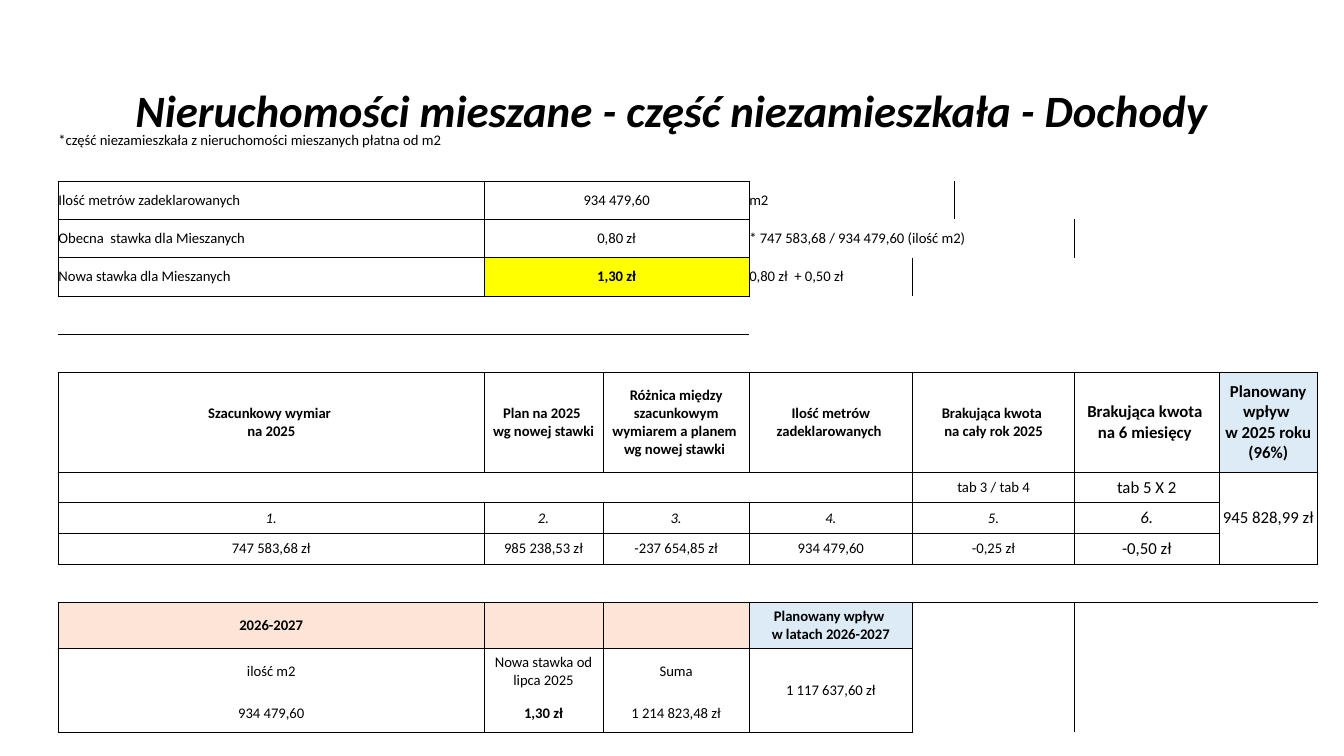
import pptx
import pptx.util
import pptx.dml.color
import pptx.enum.text
import pptx.oxml
import pptx.oxml.ns
import lxml.etree

Pt = pptx.util.Pt
qn = pptx.oxml.ns.qn
ALIGN = pptx.enum.text.PP_ALIGN
MIDDLE = pptx.enum.text.MSO_ANCHOR.MIDDLE

FONT = "Calibri"
NO_STYLE = "{2D5ABB26-0587-4C30-8999-92F81FD0307C}"
BLACK, YELLOW, BLUE, PEACH = "000000", "FFFF00", "DDEBF7", "FCE4D6"
SMALL, LARGE = 10.5, 12

COLUMNS = [304, 85, 104.5, 116.5, 30, 86, 103, 70.5]
ROWS = [45] + [27.3] * 5 + [71.3] + [21] * 3 + [27.3, 32.9, 32.6, 0, 27.3, 27.3]

TEXTS = {
    0: {0: "*część niezamieszkała z nieruchomości mieszanych płatna od m2 \n"},
    1: {0: "Ilość metrów zadeklarowanych", 1: "934 479,60", 3: "m2"},
    2: {0: "Obecna  stawka dla Mieszanych", 1: "0,80 zł",
        3: "* 747 583,68 / 934 479,60 (ilość m2)"},
    3: {0: "Nowa stawka dla Mieszanych", 1: "1,30 zł", 3: "0,80 zł  + 0,50 zł"},
    6: {0: "Szacunkowy wymiar \nna 2025", 1: "Plan na 2025 \nwg nowej stawki",
        2: "Różnica między szacunkowym wymiarem a planem \nwg nowej stawki ",
        3: "Ilość metrów zadeklarowanych ", 4: "Brakująca kwota \nna cały rok 2025",
        6: "Brakująca kwota \nna 6 miesięcy ", 7: "Planowany wpływ \nw 2025 roku (96%)"},
    7: {4: "tab 3 / tab 4", 6: "tab 5 X 2", 7: "945 828,99 zł"},
    8: {0: "1.", 1: "2.", 2: "3.", 3: "4.", 4: "5.", 6: "6."},
    9: {0: "747 583,68 zł", 1: "985 238,53 zł", 2: "-237 654,85 zł",
        3: "934 479,60", 4: "-0,25 zł", 6: "-0,50 zł"},
    11: {0: "2026-2027", 3: "Planowany wpływ \nw latach 2026-2027"},
    12: {0: "ilość m2", 1: "Nowa stawka od lipca 2025", 2: "Suma", 3: "1 117 637,60 zł"},
    13: {0: "934 479,60", 1: "1,30 zł", 2: "1 214 823,48 zł"},
}
FILLS = {(3, 1): YELLOW, (6, 7): BLUE, (11, 3): BLUE,
         (11, 0): PEACH, (11, 1): PEACH, (11, 2): PEACH}
BOLD_ROWS, BOLD_CELLS = (6, 11), ((3, 1), (13, 1))
ITALIC_ROW = 8

SPANS = [(0, 3, 1, 2), (1, 3, 1, 2), (2, 3, 1, 3), (7, 0, 1, 4), (7, 7, 3, 1),
         (12, 3, 3, 1), (12, 4, 2, 2), (12, 6, 2, 1), (12, 7, 2, 1)]
SPANS += [(row, 1, 1, 2) for row in (1, 2, 3)]
SPANS += [(row, 4, 1, 2) for row in (3, 4, 5, 6, 7, 8, 9, 10, 11, 14, 15)]
SPANS += [(13, col, 2, 1) for col in range(3)]

GRIDS = [(1, 3, 2), (6, 9, 7), (11, 14, 3)]
SIDES = {"lnL": (0, -1), "lnR": (0, 1), "lnT": (-1, 0), "lnB": (1, 0)}


def rgb(value):
    return pptx.dml.color.RGBColor.from_string(value)


def set_attrs(obj, values):
    for name, value in values.items():
        setattr(obj, name, value)


def format_run(r, size, bold=False, italic=False):
    set_attrs(r.font, {"name": FONT, "size": Pt(size), "bold": bold, "italic": italic})
    r.font.color.rgb = rgb(BLACK)


def size_breaks(p, size):
    points = str(int(size * 100))
    for br in p._p.findall(qn("a:br")):
        lxml.etree.SubElement(br, qn("a:rPr")).set("sz", points)
    lxml.etree.SubElement(p._p, qn("a:endParaRPr")).set("sz", points)


def in_grid(row, col):
    return any(top <= row <= bottom and col <= right for top, bottom, right in GRIDS)


def add_borders(cell, row, col):
    tcPr = cell._tc.get_or_add_tcPr()
    sides = [side for side, (down, across) in SIDES.items()
             if in_grid(row, col) or (col + across >= 0 and in_grid(row + down, col + across))]
    for place, side in enumerate(sides):
        ln = pptx.oxml.parse_xml(
            f'<a:{side} xmlns:a="http://schemas.openxmlformats.org/drawingml/2006/main" w="6350">'
            f'<a:solidFill><a:srgbClr val="{BLACK}"/></a:solidFill></a:{side}>')
        tcPr.insert(place, ln)


def fill_cell(cell, row, col):
    set_attrs(cell, {"margin_left": 0, "margin_right": 0, "margin_top": Pt(3.6),
                     "margin_bottom": Pt(3.6), "vertical_anchor": MIDDLE})
    if (row, col) in FILLS:
        cell.fill.solid()
        cell.fill.fore_color.rgb = rgb(FILLS[row, col])
    else:
        cell.fill.background()
    size = LARGE if 6 <= row <= 9 and col >= 6 else SMALL
    p = cell.text_frame.paragraphs[0]
    p.text = TEXTS.get(row, {}).get(col, "")
    left = row < 4 and col in (0, 3)
    p.alignment = ALIGN.LEFT if left else ALIGN.CENTER
    bold = row in BOLD_ROWS or (row, col) in BOLD_CELLS
    for r in p.runs:
        format_run(r, size, bold, row == ITALIC_ROW)
    size_breaks(p, size)
    add_borders(cell, row, col)


def add_title(slide, text):
    sp = slide.shapes.title
    set_attrs(sp, {"left": Pt(66), "top": Pt(28.75), "width": Pt(828), "height": Pt(104.4)})
    tf = sp.text_frame
    set_attrs(tf, {"word_wrap": True, "vertical_anchor": MIDDLE})
    p = tf.paragraphs[0]
    set_attrs(p, {"text": text, "alignment": ALIGN.CENTER, "line_spacing": 0.9})
    format_run(p.runs[0], 32, True, True)


def add_income_table(slide):
    frame = slide.shapes.add_table(len(ROWS), len(COLUMNS), Pt(41.75), Pt(84.5),
                                   Pt(sum(COLUMNS)), Pt(sum(ROWS)))
    table = frame.table
    set_attrs(table, {"first_row": False, "horz_banding": False})
    table._tbl.tblPr.find(qn("a:tableStyleId")).text = NO_STYLE
    for column, width in zip(table.columns, COLUMNS):
        column.width = Pt(width)
    for line, height in zip(table.rows, ROWS):
        line.height = Pt(height)
    for row in range(len(ROWS)):
        for col in range(len(COLUMNS)):
            fill_cell(table.cell(row, col), row, col)
    for row, col, high, wide in SPANS:
        table.cell(row, col).merge(table.cell(row + high - 1, col + wide - 1))


def main():
    prs = pptx.Presentation()
    set_attrs(prs, {"slide_width": Pt(960), "slide_height": Pt(540)})
    slide = prs.slides.add_slide(prs.slide_layouts[5])
    add_title(slide, "Nieruchomości mieszane - część niezamieszkała - Dochody")
    add_income_table(slide)
    prs.save("out.pptx")


if __name__ == "__main__":
    main()
